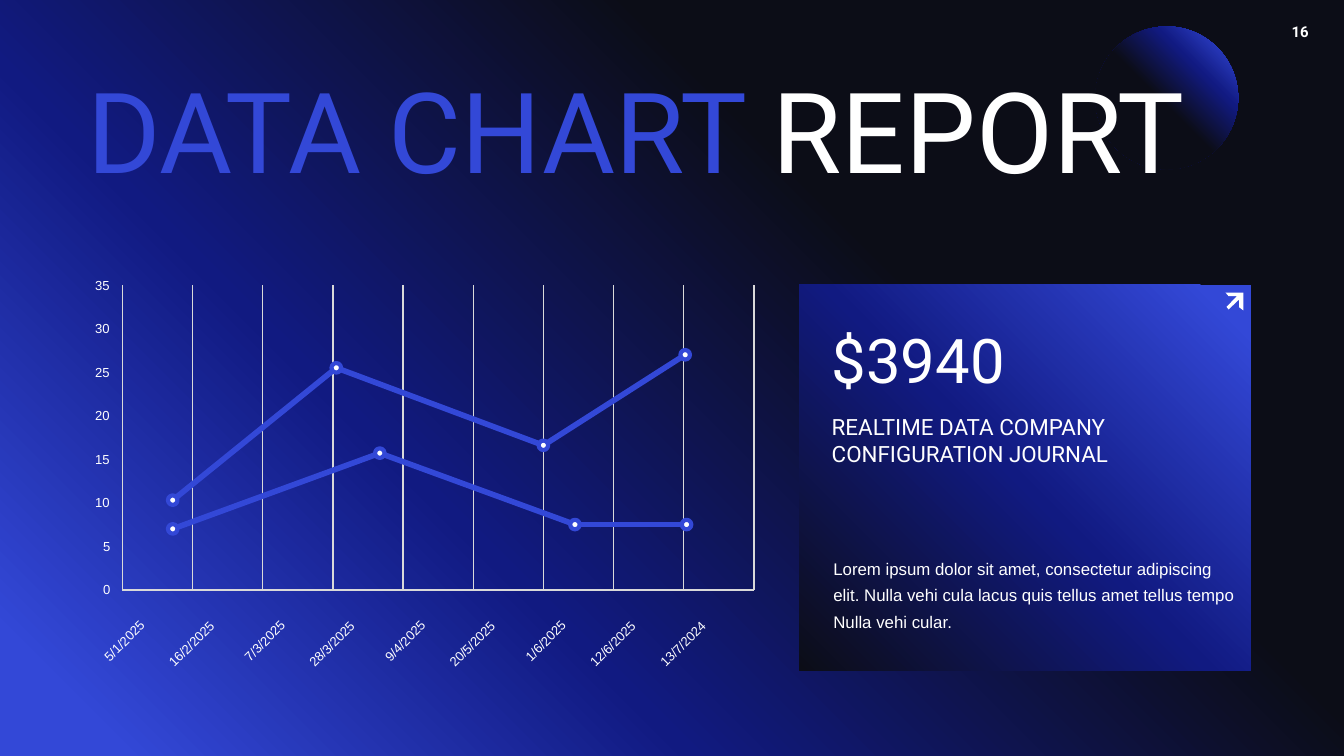
"""Build the data chart report slide."""
from copy import deepcopy
from itertools import pairwise
from math import sqrt

from pptx import Presentation
from pptx.dml.color import RGBColor
from pptx.enum.shapes import MSO_CONNECTOR, MSO_SHAPE
from pptx.enum.text import MSO_AUTO_SIZE
from pptx.oxml.ns import qn
from pptx.util import Cm, Pt

BLUE = RGBColor(0x33, 0x48, 0xD7)
NAVY = RGBColor(0x11, 0x1A, 0x81)
INK = RGBColor(0x0C, 0x0D, 0x17)
WHITE = RGBColor(0xFF, 0xFF, 0xFF)
GREY = RGBColor(0xD9, 0xD9, 0xD9)

BACKDROP = [(0, BLUE), (6, BLUE), (33, NAVY), (66, INK), (100, INK)]
ORB = [(0, BLUE), (6, BLUE), (29, NAVY), (53, INK), (100, INK)]
CARD = [(0, BLUE), (6, BLUE), (51, NAVY), (100, INK)]

FORMATS = {
    "page": {"name": "Roboto", "size": Pt(8), "bold": True},
    "title": {"name": "Roboto", "size": Pt(60)},
    "amount": {"name": "Roboto", "size": Pt(33)},
    "heading": {"name": "Roboto", "size": Pt(12)},
    "body": {"name": "Arial", "size": Pt(9)},
    "label": {"name": "Arial", "size": Pt(7)},
}
TITLE = [("DATA CHART ", BLUE), ("REPORT", WHITE)]
PAGE = [("16", WHITE)]
CARD_TEXTS = [
    ("body", (15.57, 10.36, 8.08, 1.65), 1.3,
     "Lorem ipsum dolor sit amet, consectetur adipiscing elit. Nulla vehi cula "
     "lacus quis tellus amet tellus tempo Nulla vehi cular."),
    ("heading", (15.54, 7.72, 6.35, 1.22), None,
     "REALTIME DATA COMPANY CONFIGURATION JOURNAL"),
    ("amount", (15.54, 5.99, 5.46, 1.6), None, "$3940"),
]
ARROW = [(23.5, 5.53), (23.5, 5.87), (23.42, 5.81), (23.42, 5.66), (23.22, 5.85),
         (23.18, 5.8), (23.38, 5.6), (23.22, 5.6), (23.16, 5.53)]

DATES = ["5/1/2025", "16/2/2025", "7/3/2025", "28/3/2025", "9/4/2025",
         "20/5/2025", "1/6/2025", "12/6/2025", "13/7/2024"]
SERIES = [
    [(0.72, 10.3), (3.05, 25.5), (6, 16.6), (8.02, 27)],
    [(0.72, 7), (3.67, 15.7), (6.45, 7.5), (8.04, 7.5)],
]
MAX_VALUE, TICK = 35, 5
LEFT, TOP, WIDTH, HEIGHT = 2.31, 5.39, 11.94, 5.76
STEP = WIDTH / len(DATES)
LABEL_H, MARKER = 0.48, 0.18


def gradient(fill, root, stops, angle):
    fill.gradient()
    fill.gradient_angle = angle
    lst = root.find(".//" + qn("a:gsLst"))
    for _ in range(len(stops) - len(lst)):
        lst.append(deepcopy(lst[0]))
    for stop, (pos, color) in zip(fill.gradient_stops, stops):
        stop.position = pos / 100
        stop.color.rgb = color


def add_text(s, box, runs, style, spacing=None, wrap=True):
    sp = s.shapes.add_textbox(*map(Cm, box))
    tf = sp.text_frame
    frame = {"word_wrap": wrap, "auto_size": MSO_AUTO_SIZE.SHAPE_TO_FIT_TEXT,
             "margin_left": Cm(0.18), "margin_right": Cm(0.18),
             "margin_top": Cm(0.09), "margin_bottom": Cm(0.09)}
    for key, value in frame.items():
        setattr(tf, key, value)
    p = tf.paragraphs[0]
    p.line_spacing = spacing
    for text, color in runs:
        r = p.add_run()
        r.text = text
        for key, value in FORMATS[style].items():
            setattr(r.font, key, value)
        r.font.color.rgb = color
    return sp


def add_shape(s, kind, box):
    sp = s.shapes.add_shape(kind, *map(Cm, box))
    sp.shadow.inherit = False
    sp.line.fill.background()
    return sp


def add_line(s, start, end, color, width):
    ln = s.shapes.add_connector(MSO_CONNECTOR.STRAIGHT, *map(Cm, (*start, *end)))
    ln.line.color.rgb = color
    ln.line.width = Pt(width)
    spPr = ln._element.spPr
    spPr.append(spPr.makeelement(qn("a:effectLst"), {}))


def plot(column, value):
    return LEFT + column * STEP, TOP + HEIGHT * (1 - value / MAX_VALUE)


def add_axes(s):
    for i in range(len(DATES) + 1):
        add_line(s, plot(i, 0), plot(i, MAX_VALUE), GREY, 0.75)
    add_line(s, plot(0, 0), plot(len(DATES), 0), GREY, 0.75)
    for value in range(0, MAX_VALUE + 1, TICK):
        w = 0.51 if value < 10 else 0.66
        y = plot(0, value)[1]
        add_text(s, (2.28 - w, y - LABEL_H / 2, w, LABEL_H),
                 [(str(value), WHITE)], "label", wrap=False)
    for i, date in enumerate(DATES):
        w = 1.37 if len(date) < 9 else 1.52
        reach = w / 2 / sqrt(2)
        x, y = 2.85 + i * STEP - reach, 11.61 + reach
        sp = add_text(s, (x - w / 2, y - LABEL_H / 2, w, LABEL_H),
                      [(date, WHITE)], "label", wrap=False)
        sp.rotation = 315


def add_series(s, values):
    points = [plot(*value) for value in values]
    for start, end in pairwise(points):
        add_line(s, start, end, BLUE, 3)
    for x, y in points:
        sp = add_shape(s, MSO_SHAPE.OVAL,
                       (x - MARKER / 2, y - MARKER / 2, MARKER, MARKER))
        sp.fill.solid()
        sp.fill.fore_color.rgb = WHITE
        sp.line.color.rgb = BLUE
        sp.line.width = Pt(2.25)


def add_card(s):
    sp = add_shape(s, MSO_SHAPE.ROUNDED_RECTANGLE, (15.11, 5.38, 8.53, 7.29))
    sp.adjustments[0] = 0
    gradient(sp.fill, sp._element, CARD, 225)
    fb = s.shapes.build_freeform(*map(Cm, ARROW[0]))
    fb.add_line_segments([(Cm(x), Cm(y)) for x, y in ARROW[1:]])
    arrow = fb.convert_to_shape()
    arrow.shadow.inherit = False
    arrow.fill.solid()
    arrow.fill.fore_color.rgb = WHITE
    arrow.line.fill.background()
    for style, box, spacing, text in CARD_TEXTS:
        add_text(s, box, [(text, WHITE)], style, spacing)


def main():
    prs = Presentation()
    prs.slide_width, prs.slide_height = Cm(25.4), Cm(14.29)
    s = prs.slides.add_slide(prs.slide_layouts[6])
    gradient(s.background.fill, s._element, BACKDROP, 45)
    add_text(s, (24.23, 0.33, 0.71, 0.53), PAGE, "page", wrap=False)
    orb = add_shape(s, MSO_SHAPE.OVAL, (20.7, 0.5, 2.7, 2.7))
    orb.rotation = 180
    gradient(orb.fill, orb._element, ORB, 45)
    add_text(s, (1.47, 1.07, 22.17, 2.77), TITLE, "title")
    add_card(s)
    add_axes(s)
    for values in SERIES:
        add_series(s, values)
    prs.save("out.pptx")


if __name__ == "__main__":
    main()
